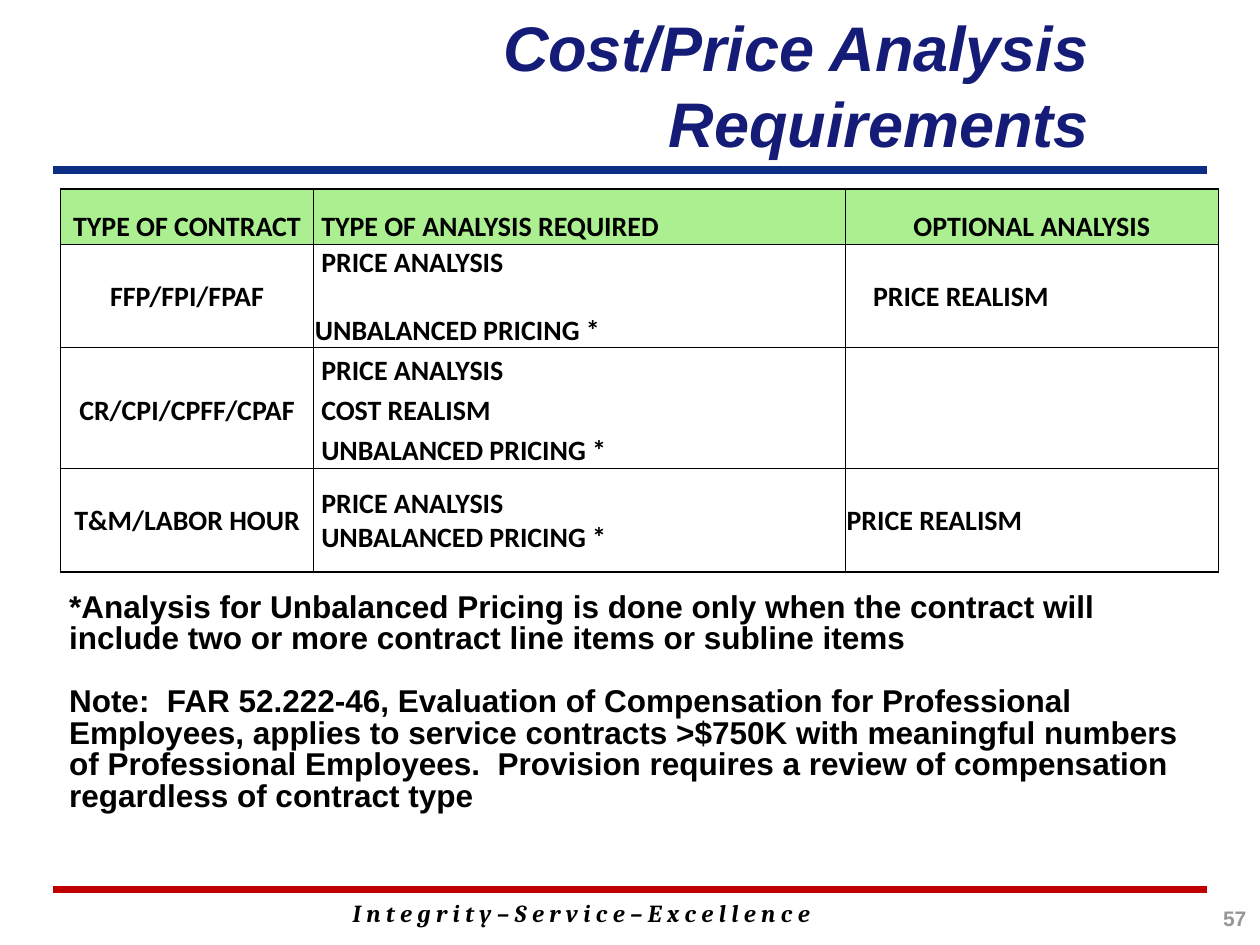
import pptx
import pptx.util
import pptx.dml.color
import pptx.enum.shapes
import pptx.enum.text
import pptx.oxml.ns
import lxml.etree

Pt = pptx.util.Pt
RGB = pptx.dml.color.RGBColor.from_string
ALIGN = pptx.enum.text.PP_ALIGN
ANCHOR = pptx.enum.text.MSO_ANCHOR
qn = pptx.oxml.ns.qn

theme = {
    "title": ("Arial", 36, "151C77", True),
    "cell": ("Calibri", 16, "000000", False),
    "note": ("Arial", 18, "000000", False),
    "motto": ("Cambria", 14, "000000", True),
    "number": ("Arial", 12, "969696", False),
    "header_fill": "ACEF91",
    "border": "000000",
    "top_rule": "0C2D83",
    "bottom_rule": "C00000",
}

prs = pptx.Presentation()
prs.slide_width = pptx.util.Inches(10)
prs.slide_height = pptx.util.Inches(7.5)
col = prs.slide_width / 100
row = prs.slide_height / 75
s = prs.slides.add_slide(prs.slide_layouts[6])


def style(p, role, align=ALIGN.LEFT):
    name, size, color, italic = theme[role]
    p.alignment = align
    p.font.name = name
    p.font.size = Pt(size)
    p.font.color.rgb = RGB(color)
    p.font.bold = True
    p.font.italic = italic


def add_text(x, y, w, h, paragraphs, role, align=ALIGN.LEFT, anchor=ANCHOR.TOP, line=None):
    sp = s.shapes.add_textbox(int(x * col), int(y * row), int(w * col), int(h * row))
    tf = sp.text_frame
    tf.word_wrap = True
    tf.vertical_anchor = anchor
    for i, text in enumerate(paragraphs):
        p = tf.paragraphs[0] if i == 0 else tf.add_paragraph()
        p.text = text
        style(p, role, align)
        if line:
            p.line_spacing = Pt(line)
        if i:
            p.space_before = Pt(line)


for y, color in ((70.6, "bottom_rule"), (13.5, "top_rule")):
    rule = s.shapes.add_connector(
        pptx.enum.shapes.MSO_CONNECTOR.STRAIGHT,
        int(4.2 * col), int(y * row), int(95.8 * col), int(y * row))
    rule.line.color.rgb = RGB(theme[color])
    rule.line.width = Pt(4.5)
    lxml.etree.SubElement(rule._element.spPr, qn("a:effectLst"))

add_text(27, 70.8, 45.9, 3.4,
         ["I n t e g r i t y – S e r v i c e – E x c e l l e n c e"], "motto")
add_text(18.2, 0.8, 69.2, 11.8, ["Cost/Price Analysis Requirements"], "title",
         ALIGN.RIGHT, ANCHOR.MIDDLE, 43.4)

col_widths = [20.1, 42.2, 29.6]
row_heights = [4.4, 8.2, 3.2, 3.2, 3.2, 8.2]
contracts = [
    ("TYPE OF CONTRACT", ["TYPE OF ANALYSIS REQUIRED"], "OPTIONAL ANALYSIS"),
    ("FFP/FPI/FPAF", ["PRICE ANALYSIS", "UNBALANCED PRICING *"], "PRICE REALISM"),
    ("", ["PRICE ANALYSIS"], ""),
    ("CR/CPI/CPFF/CPAF", ["COST REALISM"], ""),
    ("", ["UNBALANCED PRICING *"], ""),
    ("T&M/LABOR HOUR", ["PRICE ANALYSIS", "UNBALANCED PRICING *"], "PRICE REALISM"),
]
indents = {(1, 1): [0.5, 0], (1, 2): [2.1]}
middle_rows = (1, 5)
no_top, no_bottom = (3, 4), (2, 3)

table = s.shapes.add_table(
    len(row_heights), len(col_widths), int(4.8 * col), int(15 * row),
    int(sum(col_widths) * col), int(sum(row_heights) * row)).table
table.first_row = False
table.horz_banding = False
for c, width in enumerate(col_widths):
    table.columns[c].width = int(width * col)
for r, (contract, required, optional) in enumerate(contracts):
    table.rows[r].height = int(row_heights[r] * row)
    for c, lines in enumerate(([contract], required, [optional])):
        cell = table.cell(r, c)
        cell.margin_left = cell.margin_right = cell.margin_top = int(0.1 * col)
        cell.margin_bottom = 0
        cell.vertical_anchor = ANCHOR.MIDDLE if r in middle_rows else ANCHOR.BOTTOM
        tf = cell.text_frame
        for i, text in enumerate(lines):
            p = tf.paragraphs[0] if i == 0 else tf.add_paragraph()
            p.text = text
            centred = c == 0 or (r == 0 and c == 2)
            style(p, "cell", ALIGN.CENTER if centred else ALIGN.LEFT)
            indent = indents.get((r, c), [0.5 if c == 1 else 0] * len(lines))[i]
            p._p.get_or_add_pPr().set("marL", str(int(indent * col)))
            if r == 1 and i == 1:
                p.space_before = Pt(19.5)
        tcPr = cell._tc.get_or_add_tcPr()
        for side in ("lnL", "lnR", "lnT", "lnB"):
            ln = lxml.etree.SubElement(tcPr, qn("a:" + side), w=str(Pt(1)))
            if (side == "lnT" and r in no_top) or (side == "lnB" and r in no_bottom):
                lxml.etree.SubElement(ln, qn("a:noFill"))
            else:
                fill = lxml.etree.SubElement(ln, qn("a:solidFill"))
                lxml.etree.SubElement(fill, qn("a:srgbClr"), val=theme["border"])
        if r == 0:
            cell.fill.solid()
            cell.fill.fore_color.rgb = RGB(theme["header_fill"])
        else:
            cell.fill.background()

add_text(4.5, 46.6, 91.8, 18.7, [
    "*Analysis for Unbalanced Pricing is done only when the contract will include "
    "two or more contract line items or subline items",
    "Note:  FAR 52.222-46, Evaluation of Compensation for Professional Employees, "
    "applies to service contracts >$750K with meaningful numbers of Professional "
    "Employees.  Provision requires a review of compensation regardless of contract type",
], "note", line=18)
add_text(87.4, 71.4, 12.5, 3.3, ["57"], "number", ALIGN.RIGHT)

prs.save("out.pptx")
